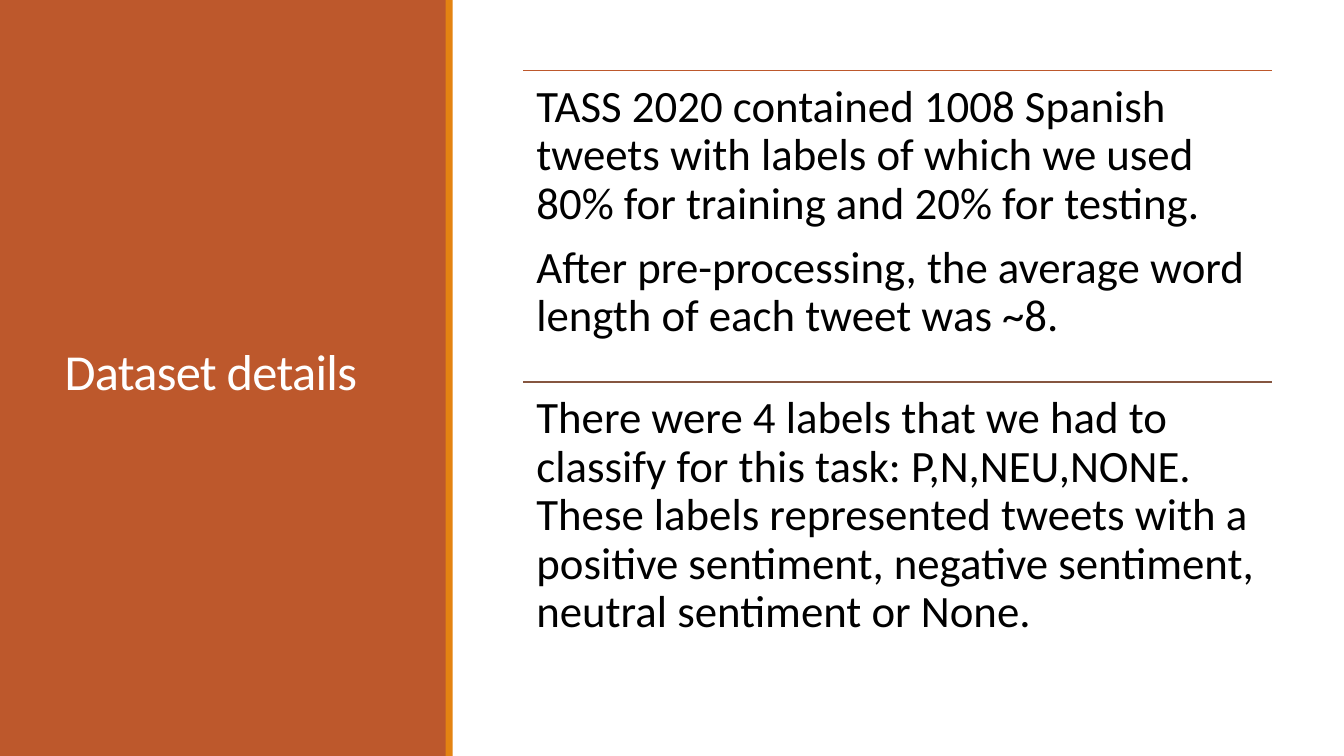
from dataclasses import dataclass

from lxml import etree
from pptx import Presentation
from pptx.dml.color import RGBColor as RGB
from pptx.enum.shapes import MSO_CONNECTOR as CONN, MSO_SHAPE as SHAPE
from pptx.enum.text import MSO_ANCHOR as ANCHOR, MSO_AUTO_SIZE as AUTO, PP_ALIGN as ALIGN
from pptx.oxml.ns import qn
from pptx.util import Inches, Pt


@dataclass(frozen=True)
class Theme:
    font: str = "Calibri"
    rust: RGB = RGB.from_string("BD582C")
    orange: RGB = RGB.from_string("E48312")
    brown: RGB = RGB.from_string("865640")
    white: RGB = RGB.from_string("FFFFFF")
    black: RGB = RGB.from_string("000000")
    title_size: int = 36
    body_size: int = 32
    rule_width: float = 1.25


THEME = Theme()
TITLE = "Dataset details"
SECTIONS = [
    (THEME.rust, [
        "TASS 2020 contained 1008 Spanish tweets with labels of which we used "
        "80% for training and 20% for testing.",
        "After pre-processing, the average word length of each tweet was ~8.",
    ]),
    (THEME.brown, [
        "There were 4 labels that we had to classify for this task: P,N,NEU,NONE. "
        "These labels represented tweets with a positive sentiment, negative "
        "sentiment, neutral sentiment or None.",
    ]),
]


def write(p, text, *, size, color, line_spacing, after=0, tracking=None):
    p.alignment = ALIGN.LEFT
    p.line_spacing = line_spacing
    p.space_after = Pt(after)
    r = p.add_run()
    r.text = text
    r.font.name = THEME.font
    r.font.size = Pt(size)
    r.font.color.rgb = color
    if tracking is not None:
        r.font._element.set("spc", str(round(tracking * 100)))


def add_band(s, x, y, w, h, color):
    band = s.shapes.add_shape(SHAPE.RECTANGLE, Inches(x), Inches(y), Inches(w), Inches(h))
    band.shadow.inherit = False
    band.fill.solid()
    band.fill.fore_color.rgb = color
    band.line.fill.background()


def add_rule(s, x, y, w, color):
    rule = s.shapes.add_connector(CONN.STRAIGHT, Inches(x), Inches(y), Inches(x + w), Inches(y))
    rule.line.color.rgb = color
    rule.line.width = Pt(THEME.rule_width)
    etree.SubElement(rule._element.spPr, qn("a:effectLst"))


def add_title_panel(s, x, y, w, h):
    # Coloured panel with an accent strip on its right edge
    add_band(s, x, y, w, h, THEME.rust)
    add_band(s, x + w - 0.01, y, 0.07, h, THEME.orange)

    # Title, brought in front of the panel
    title = s.shapes.title
    title.left, title.top = Inches(x + 0.54), Inches(y + 0.57)
    title.width, title.height = Inches(w - 1.06), Inches(h - 1.19)
    tf = title.text_frame
    tf.word_wrap = True
    tf.auto_size = AUTO.NONE
    tf.vertical_anchor = ANCHOR.MIDDLE
    write(tf.paragraphs[0], TITLE, size=THEME.title_size, color=THEME.white,
          line_spacing=0.85, tracking=-0.5)
    s.shapes._spTree.append(title._element)


def add_section(s, x, y, w, h, color, paragraphs):
    add_rule(s, x, y, w, color)
    tf = s.shapes.add_textbox(Inches(x), Inches(y), Inches(w), Inches(h)).text_frame
    tf.word_wrap = True
    tf.vertical_anchor = ANCHOR.TOP
    tf.margin_left = tf.margin_right = tf.margin_top = tf.margin_bottom = Inches(0.13)
    for i, text in enumerate(paragraphs):
        p = tf.add_paragraph() if i else tf.paragraphs[0]
        write(p, text, size=THEME.body_size, color=THEME.black, line_spacing=0.9, after=11)


def add_sections(s, x, y, w, h):
    # Equal sections stacked down the box
    step = h / len(SECTIONS)
    for i, (color, paragraphs) in enumerate(SECTIONS):
        add_section(s, x, y + i * step, w, step, color, paragraphs)


def main():
    prs = Presentation()
    prs.slide_width, prs.slide_height = Inches(13.33), Inches(7.5)
    s = prs.slides.add_slide(prs.slide_layouts[5])
    s.background.fill.solid()
    s.background.fill.fore_color.rgb = THEME.white
    add_title_panel(s, 0, 0, 4.43, 7.5)
    add_sections(s, 5.19, 0.7, 7.43, 6.18)
    prs.save("out.pptx")


if __name__ == "__main__":
    main()
